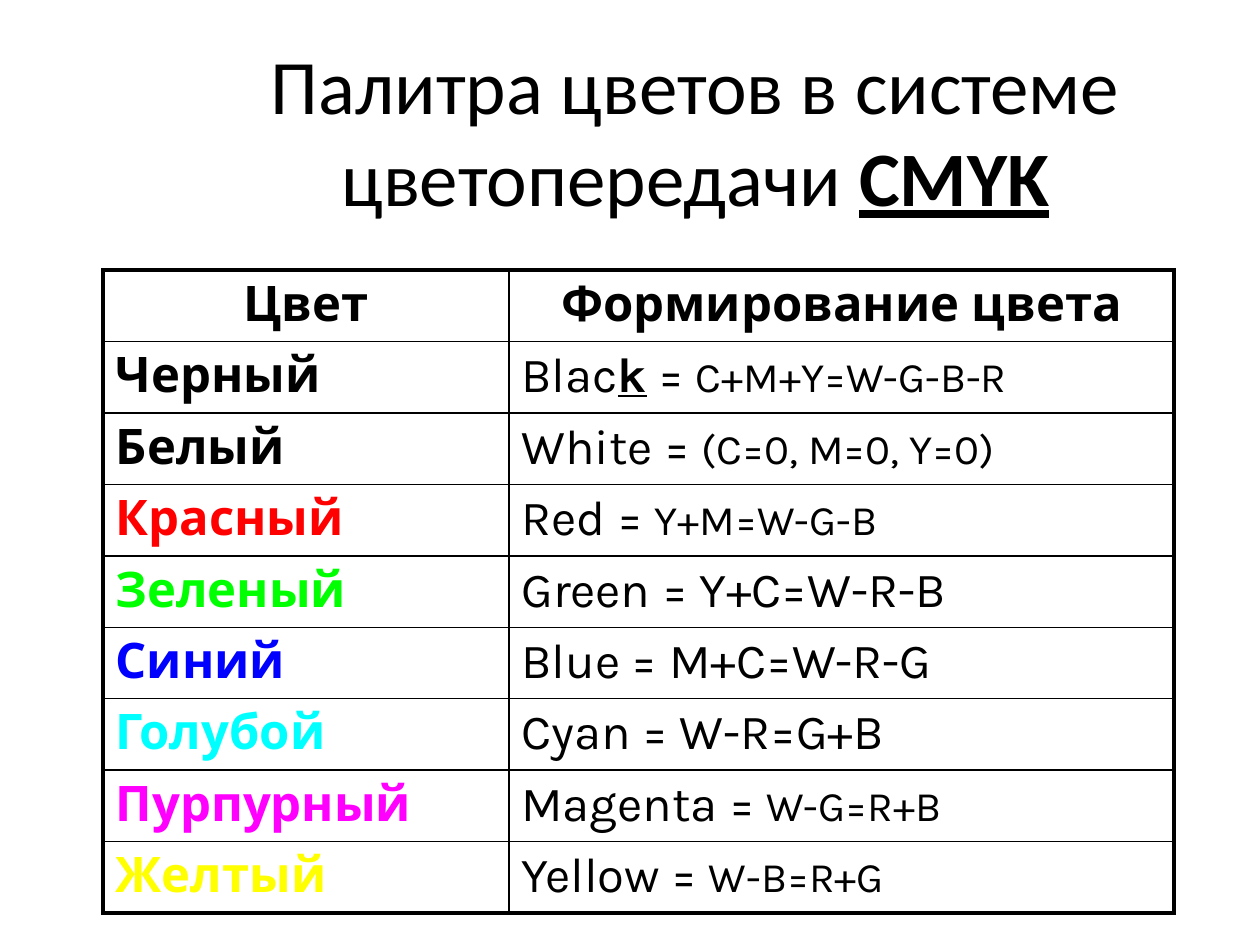
"""Build a slide with a table of colours in the CMYK system."""
from typing import NamedTuple

from lxml import etree
from pptx import Presentation
from pptx import util as u
from pptx.dml.color import RGBColor
from pptx.enum import text
from pptx.oxml import ns

BLACK = "000000"
THICK, THIN = 2.25, 1


class Span(NamedTuple):
    words: str
    size: float = 28
    marked: bool = False


class ColourRow(NamedTuple):
    name: str
    colour: str
    formula: list[Span]


ROWS = [
    ColourRow("Черный", BLACK, [Span("Blac"), Span("k", marked=True), Span(" = "),
                                Span("C+M+Y=W-G-B-R", 24)]),
    ColourRow("Белый", BLACK, [Span("White = "), Span("(C=0, M=0, Y=0)", 24)]),
    ColourRow("Красный", "FF0000", [Span("Red = "), Span("Y+M=W-G-B", 24)]),
    ColourRow("Зеленый", "00FF00", [Span("Green = Y+C=W-R-B")]),
    ColourRow("Синий", "0000FF", [Span("Blue = M+C=W-R-G")]),
    ColourRow("Голубой", "00FFFF", [Span("Cyan = W-R=G+B")]),
    ColourRow("Пурпурный", "FF00FF", [Span("Magenta = "), Span("W-G=R+B", 24)]),
    ColourRow("Желтый", "FFFF00", [Span("Yellow = "), Span("W-B=R+G", 24)]),
]


def rgb(colour: str) -> RGBColor:
    return RGBColor.from_string(colour)


def write(para, spans: list[Span], face: str, colour: str = BLACK,
          bold: bool = False, centred: bool = False) -> None:
    para.alignment = text.PP_ALIGN.CENTER if centred else text.PP_ALIGN.LEFT
    para.font.name = face
    para.font.bold = bold
    para.font.color.rgb = rgb(colour)
    sizes = {span.size for span in spans}
    if len(sizes) == 1:
        para.font.size = u.Pt(spans[0].size)
    for span in spans:
        run = para.add_run()
        run.text = span.words
        if len(sizes) > 1:
            run.font.size = u.Pt(span.size)
        if span.marked:
            run.font.bold = run.font.underline = True


def add_border(cell, side: str, points: float) -> None:
    properties = cell._tc.get_or_add_tcPr()
    line = etree.SubElement(properties, ns.qn(f"a:ln{side}"), w=str(u.Pt(points)))
    fill = etree.SubElement(line, ns.qn("a:solidFill"))
    etree.SubElement(fill, ns.qn("a:srgbClr"), val=BLACK)


def add_title(page) -> None:
    box = page.shapes.add_textbox(u.Cm(3.2), u.Cm(0.58), u.Cm(21.64), u.Cm(4.06))
    frame = box.text_frame
    frame.word_wrap = True
    frame.vertical_anchor = text.MSO_ANCHOR.MIDDLE
    spans = [Span("Палитра цветов в системе цветопередачи ", 44),
             Span("CMYK", 44, True)]
    write(frame.paragraphs[0], spans, "Calibri", centred=True)


def add_colour_table(page) -> None:
    count, pitch = len(ROWS) + 1, 1.41
    table = page.shapes.add_table(count, 2, u.Cm(2.08), u.Cm(5.44),
                                  u.Cm(21.59), u.Cm(count * pitch)).table
    table.first_row = table.horz_banding = False
    for column, width in zip(table.columns, (8.18, 13.41)):
        column.width = u.Cm(width)
    for row in table.rows:
        row.height = u.Cm(pitch)

    for column, heading in enumerate(("Цвет", "Формирование цвета")):
        write(table.cell(0, column).text_frame.paragraphs[0], [Span(heading)],
              "Karla", bold=True, centred=True)
    for index, entry in enumerate(ROWS, start=1):
        name, formula = (table.cell(index, column).text_frame.paragraphs[0]
                         for column in range(2))
        write(name, [Span(entry.name)], "Karla", entry.colour, bold=True)
        write(formula, entry.formula, "Karla")

    for index in range(count):
        for column in range(2):
            cell = table.cell(index, column)
            edges = {"L": column == 0, "R": column == 1,
                     "T": index == 0, "B": index == count - 1}
            for side, outer in edges.items():
                add_border(cell, side, THICK if outer else THIN)
            cell.fill.background()


def main() -> None:
    deck = Presentation()
    deck.slide_width, deck.slide_height = u.Cm(25.4), u.Cm(19.05)
    page = deck.slides.add_slide(deck.slide_layouts[6])
    page.background.fill.solid()
    page.background.fill.fore_color.rgb = rgb("FFFFFF")
    add_title(page)
    add_colour_table(page)
    deck.save("out.pptx")


if __name__ == "__main__":
    main()
